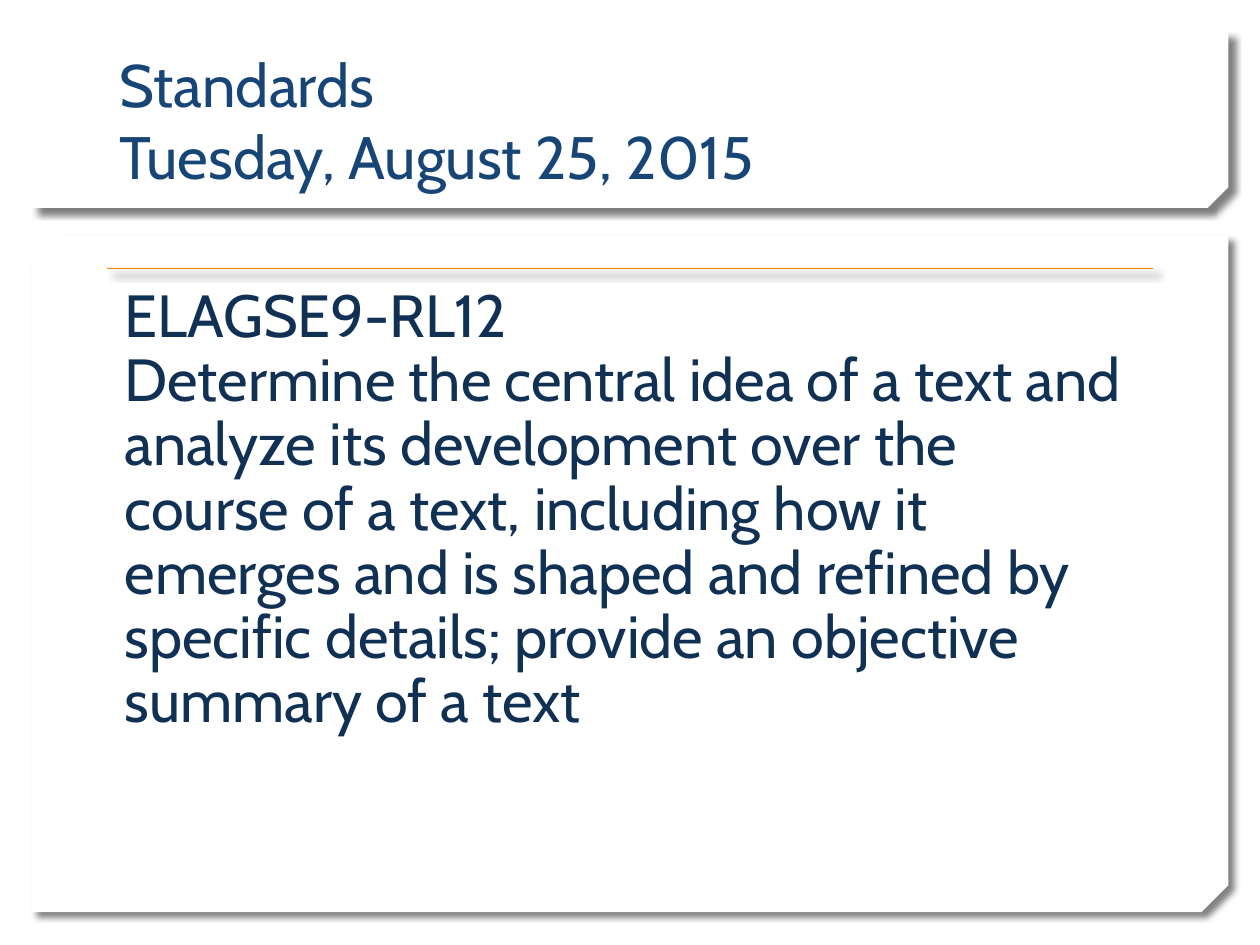
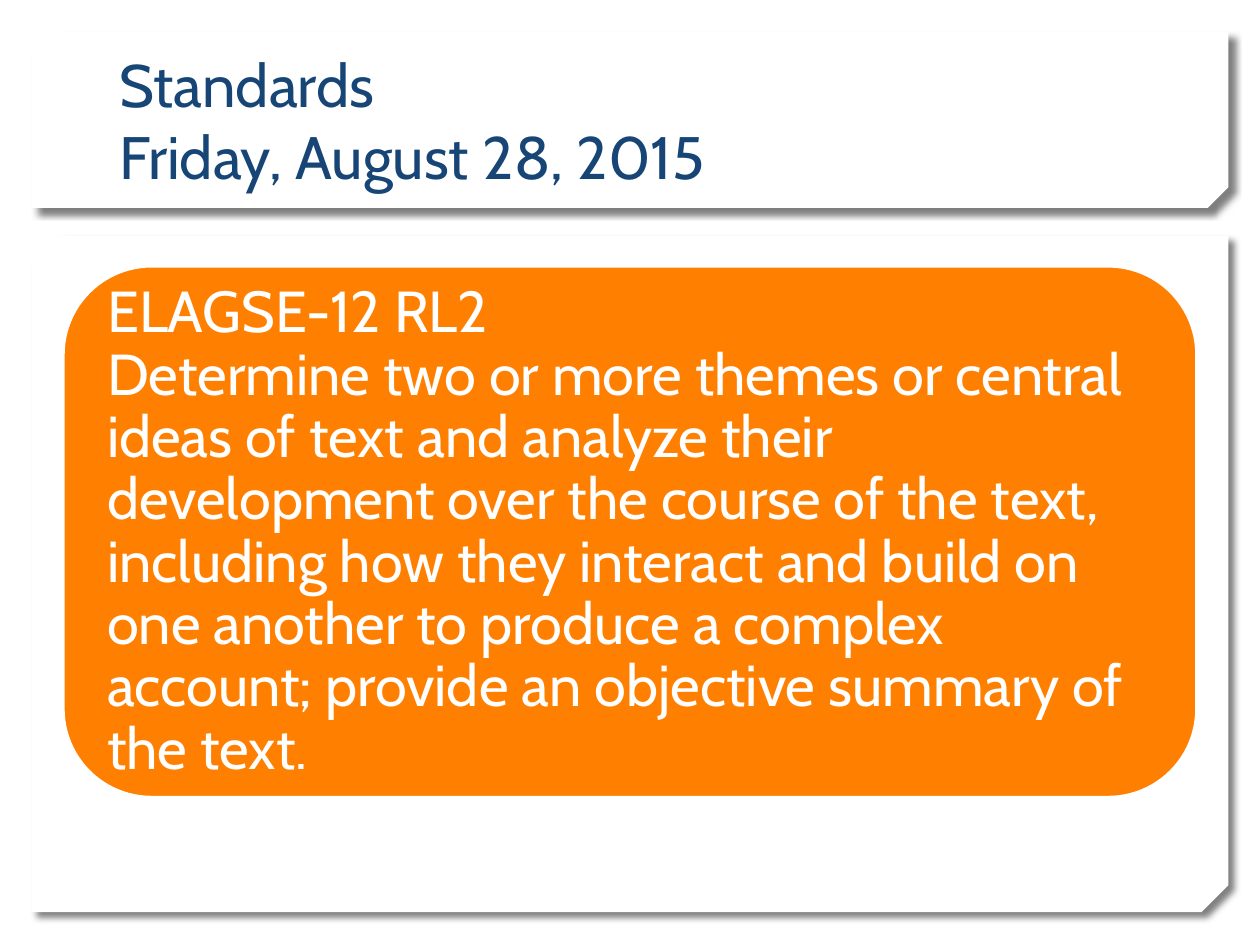
from lxml.etree import SubElement as Sub
from pptx import Presentation
from pptx.dml.color import RGBColor
from pptx.enum.shapes import MSO_CONNECTOR as Link, MSO_SHAPE as Kind
from pptx.enum.text import MSO_ANCHOR as Anchor
from pptx.oxml.ns import qn
from pptx.util import Emu, Pt

WHITE = RGBColor(255, 255, 255)
ORANGE = RGBColor(0xFF, 0x7F, 0x01)
BLUE = RGBColor(0x17, 0x45, 0x76)
NAVY = RGBColor(0x10, 0x31, 0x54)
FONT = "Cabin"
PX = 9144

PANELS = [((25, 187, 950, 537), 0.04), ((25, 25, 950, 140), 0.117)]
TITLE = dict(box=(85, 32, 829, 125), inset=(10, 5), anchor=Anchor.BOTTOM,
             size=34.2, color=BLUE)
RULE = (85, 213, 915, 213)
CARD = (50, 211, 900, 422)
SHADE = dict(blurRad=Pt(4), dist=Pt(5), dir=45 * 60000, algn="tl", rotWithShape=0)

SLIDES = [
    dict(
        title="Standards\nTuesday, August 25, 2015",
        body="ELAGSE9-RL12\nDetermine the central idea of a text and analyze its "
             "development over the course of a text, including how it emerges and is "
             "shaped and refined by specific details; provide an objective summary "
             "of a text",
        look=dict(box=(85, 213, 829, 438), anchor=Anchor.TOP, size=34, color=NAVY),
        card=False,
    ),
    dict(
        title="Standards\nFriday, August 28, 2015",
        body="ELAGSE-12 RL2\nDetermine two or more themes or central ideas of text "
             "and analyze their development over the course of the text, including "
             "how they interact and build on one another to produce a complex "
             "account; provide an objective summary of the text.",
        look=dict(box=(71, 232, 859, 381), anchor=Anchor.MIDDLE, size=33, color=WHITE),
        card=True,
    ),
]


def px(vals):
    return [Emu(v * PX) for v in vals]


def apply(obj, vals):
    for key, val in vals.items():
        setattr(obj, key, val)


def shade(shape):
    group = Sub(shape._element.spPr, qn("a:effectLst"))
    cast = Sub(group, qn("a:outerShdw"), {k: str(int(v)) if k != "algn" else v
                                          for k, v in SHADE.items()})
    tone = Sub(cast, qn("a:srgbClr"), val="000000")
    Sub(tone, qn("a:alpha"), val="50000")


def solid(slide, kind, box):
    shape = slide.shapes.add_shape(kind, *px(box))
    shape.fill.solid()
    return shape


def panel(slide, box, snip):
    shape = solid(slide, Kind.SNIP_2_DIAG_RECTANGLE, box)
    shape.adjustments[0] = 0
    shape.adjustments[1] = snip
    shape.fill.fore_color.rgb = WHITE
    shape.line.fill.background()
    shape._element.spPr.xfrm.set("flipV", "1")
    shade(shape)


def rule(slide):
    line = slide.shapes.add_connector(Link.STRAIGHT, *px(RULE))
    line.line.color.rgb = ORANGE
    line.line.width = Pt(1)
    shade(line)


def card(slide):
    shape = solid(slide, Kind.ROUNDED_RECTANGLE, CARD)
    shape.shadow.inherit = False
    shape.fill.fore_color.rgb = ORANGE
    shape.line.color.rgb = WHITE
    shape.line.width = Pt(2)


def write(slide, text, box, anchor, size, color, inset=(14, 14), space=0.9):
    frame = slide.shapes.add_textbox(*px(box)).text_frame
    side, top = px(inset)
    apply(frame, dict(word_wrap=True, vertical_anchor=anchor, margin_left=side,
                      margin_right=side, margin_top=top, margin_bottom=top))
    para = frame.paragraphs[0]
    para.text = text.replace("\n", "\v")
    para.line_spacing = space
    for run in para.runs:
        apply(run.font, dict(name=FONT, size=Pt(size)))
        run.font.color.rgb = color


def main():
    deck = Presentation()
    apply(deck, dict(slide_width=Emu(1000 * PX), slide_height=Emu(750 * PX)))
    for page in SLIDES:
        slide = deck.slides.add_slide(deck.slide_layouts[6])
        for box, snip in PANELS:
            panel(slide, box, snip)
        write(slide, page["title"], space=1.0, **TITLE)
        if page["card"]:
            card(slide)
        else:
            rule(slide)
        write(slide, page["body"], **page["look"])
    deck.save("out.pptx")


if __name__ == "__main__":
    main()
